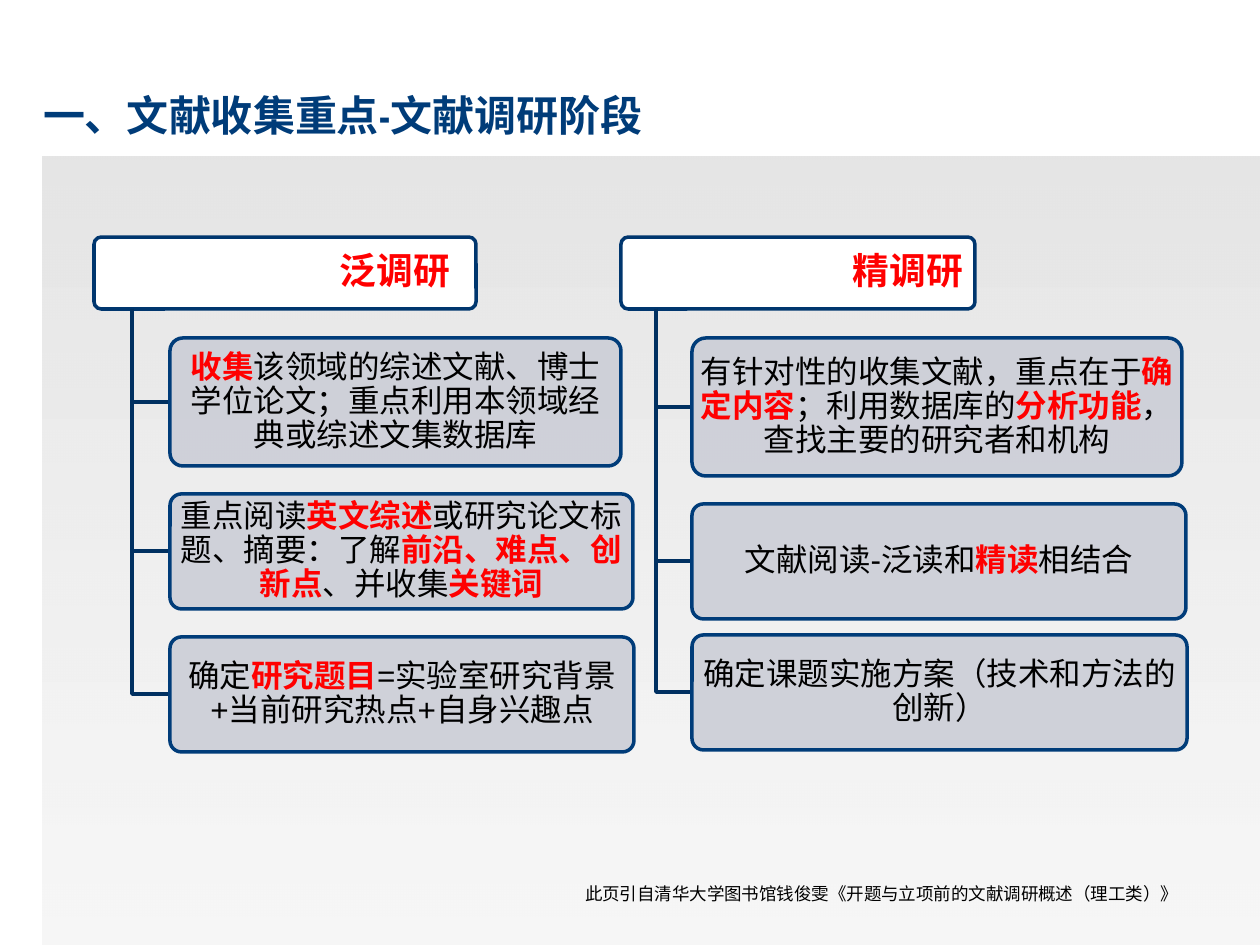
from dataclasses import dataclass
from typing import NamedTuple

from lxml import etree
from pptx import Presentation
from pptx import util as u
from pptx.dml.color import RGBColor
from pptx.enum import shapes, text
from pptx.oxml.ns import qn

PX_PER_INCH = 126
CARD_SIDE_INSET = 4
CARD_END_INSET = 4
HEADER_INDENT = 220


def px(length: int) -> u.Emu:
    return u.Emu(round(length * 914400 / PX_PER_INCH))


@dataclass(frozen=True)
class Theme:
    title: str = "003C79"
    header_edge: str = "00366E"
    branch_edge: str = "003C79"
    trunk: str = "003061"
    header: str = "FFFFFF"
    branch: str = "CCCED7"
    body: str = "000000"
    accent: str = "FF0000"
    panel_top: str = "DDDDDD"
    panel_bottom: str = "E9E9E9"
    title_font: str = "Arial Narrow"
    body_font: str = "Arial"
    title_size: int = 24
    header_size: int = 21
    branch_size: int = 18
    source_size: int = 10
    line_width: int = 2


THEME = Theme()


class Box(NamedTuple):
    left: int
    top: int
    width: int
    height: int


class Phrase(NamedTuple):
    words: str
    color: str = THEME.body
    bold: bool = False


class Branch(NamedTuple):
    top: int
    width: int
    height: int
    phrases: list[Phrase]


class Stage(NamedTuple):
    header: Box
    name: str
    branches: list[Branch]


def key(words: str) -> Phrase:
    return Phrase(words, THEME.accent, True)


STAGES = [
    Stage(Box(94, 237, 382, 72), "泛调研", [
        Branch(338, 451, 128, [
            key("收集"),
            Phrase("该领域的综述文献、博士学位论文；重点利用本领域经典或综述文集数据库")]),
        Branch(494, 463, 115, [
            Phrase("重点阅读"), key("英文综述"), Phrase("或研究论文标题、摘要：了解"),
            key("前沿、难点、创新点"), Phrase("、并收集"), key("关键词")]),
        Branch(637, 464, 115, [
            Phrase("确定"), key("研究题目"),
            Phrase("=实验室研究背景+当前研究热点+自身兴趣点")]),
    ]),
    Stage(Box(621, 237, 354, 72), "精调研", [
        Branch(338, 490, 138, [
            Phrase("有针对性的收集文献，重点在于"), key("确定内容"),
            Phrase("；利用数据库的"), key("分析功能"),
            Phrase("，查找主要的研究者和机构")]),
        Branch(504, 494, 115, [
            Phrase("文献阅读-泛读和"), key("精读"), Phrase("相结合")]),
        Branch(635, 495, 115, [
            Phrase("确定课题实施方案（技术和方法的创新）")]),
    ]),
]


def rgb(color: str) -> RGBColor:
    return RGBColor.from_string(color)


def set_alpha(shape, *percents: int) -> None:
    colors = shape._element.spPr.iter(qn("a:srgbClr"))
    for color, percent in zip(list(colors), percents):
        etree.SubElement(color, qn("a:alpha")).set("val", str(percent * 1000))


def set_outline(shape, color: str) -> None:
    shape.line.color.rgb = rgb(color)
    shape.line.width = u.Pt(THEME.line_width)


def write(paragraph, phrases: list[Phrase], size: int, font: str) -> None:
    paragraph.font.size = u.Pt(size)
    paragraph.font.name = font
    for phrase in phrases:
        run = paragraph.add_run()
        run.text = phrase.words
        run.font.bold = phrase.bold
        run.font.color.rgb = rgb(phrase.color)


def draw_panel(slide, box: Box) -> None:
    panel = slide.shapes.add_shape(shapes.MSO_SHAPE.RECTANGLE, *map(px, box))
    panel.shadow.inherit = False
    panel.fill.gradient()
    panel.fill.gradient_angle = 270
    for stop, color in zip(panel.fill.gradient_stops,
                           (THEME.panel_top, THEME.panel_bottom)):
        stop.color.rgb = rgb(color)
    set_alpha(panel, 75, 38)
    panel.line.fill.background()


def draw_label(slide, box: Box, phrase: Phrase, size: int, font: str,
               side_inset: int) -> None:
    label = slide.shapes.add_textbox(*map(px, box)).text_frame
    label.word_wrap = True
    label.margin_left = label.margin_right = px(side_inset)
    write(label.paragraphs[0], [phrase], size, font)


def draw_card(slide, box: Box, phrases: list[Phrase], size: int, fill: str,
              edge: str, opacity: int = 100, indent: int = 0) -> None:
    card = slide.shapes.add_shape(
        shapes.MSO_SHAPE.ROUNDED_RECTANGLE, *map(px, box))
    card.adjustments[0] = 0.1
    card.shadow.inherit = False
    card.fill.solid()
    card.fill.fore_color.rgb = rgb(fill)
    if opacity < 100:
        set_alpha(card, opacity)
    set_outline(card, edge)
    frame = card.text_frame
    frame.word_wrap = True
    frame.vertical_anchor = text.MSO_ANCHOR.MIDDLE
    frame.margin_left = px(CARD_SIDE_INSET + indent)
    frame.margin_right = px(CARD_SIDE_INSET)
    frame.margin_top = frame.margin_bottom = px(CARD_END_INSET)
    paragraph = frame.paragraphs[0]
    paragraph.alignment = text.PP_ALIGN.CENTER
    paragraph.line_spacing = 0.9
    write(paragraph, phrases, size, THEME.body_font)


def draw_elbow(slide, trunk: int, top: int, end: int, middle: int) -> None:
    builder = slide.shapes.build_freeform(px(trunk), px(top))
    builder.add_line_segments(
        [(px(trunk), px(middle)), (px(end), px(middle))], close=False)
    elbow = builder.convert_to_shape()
    elbow.shadow.inherit = False
    elbow.fill.background()
    set_outline(elbow, THEME.trunk)


def draw_stage(slide, stage: Stage) -> None:
    header = stage.header
    trunk = header.left + round(header.width * 0.1)
    branch_left = header.left + round(header.width * 0.2)
    draw_card(slide, header, [key(stage.name)], THEME.header_size,
              THEME.header, THEME.header_edge, indent=HEADER_INDENT)
    for branch in stage.branches:
        draw_elbow(slide, trunk, header.top + header.height, branch_left,
                   branch.top + branch.height // 2)
        draw_card(slide,
                  Box(branch_left, branch.top, branch.width, branch.height),
                  branch.phrases, THEME.branch_size, THEME.branch,
                  THEME.branch_edge, opacity=90)


def main() -> None:
    deck = Presentation()
    deck.slide_width, deck.slide_height = px(1260), px(945)
    slide = deck.slides.add_slide(deck.slide_layouts[6])
    draw_panel(slide, Box(42, 157, 1218, 788))
    draw_label(slide, Box(43, 83, 1217, 63),
               Phrase("一、文献收集重点-文献调研阶段", THEME.title, True),
               THEME.title_size, THEME.title_font, 0)
    for stage in STAGES:
        draw_stage(slide, stage)
    draw_label(slide, Box(572, 877, 636, 34),
               Phrase("此页引自清华大学图书馆钱俊雯《开题与立项前的文献调研概述（理工类）》"),
               THEME.source_size, THEME.body_font, 13)
    deck.save("out.pptx")


if __name__ == "__main__":
    main()
